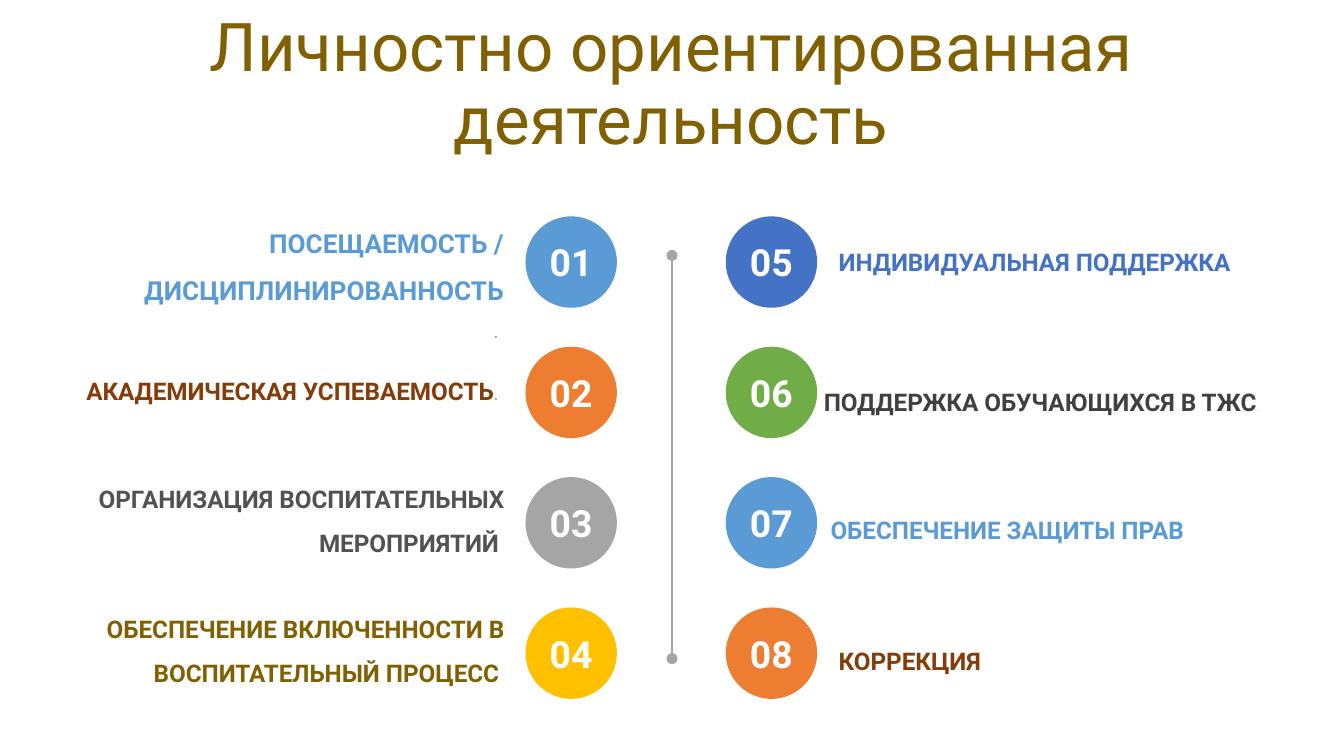
from copy import deepcopy
from dataclasses import dataclass

from lxml import etree
from pptx import Presentation
from pptx.dml.color import RGBColor
from pptx.enum.shapes import MSO_CONNECTOR, MSO_SHAPE
from pptx.enum.text import MSO_ANCHOR, MSO_AUTO_SIZE, PP_ALIGN
from pptx.oxml.ns import qn
from pptx.util import Inches, Pt

LEFT, CENTER, RIGHT = PP_ALIGN.LEFT, PP_ALIGN.CENTER, PP_ALIGN.RIGHT
MIDDLE = MSO_ANCHOR.MIDDLE
NO_FIT, GROW = MSO_AUTO_SIZE.NONE, MSO_AUTO_SIZE.SHAPE_TO_FIT_TEXT
OVAL, STRAIGHT = MSO_SHAPE.OVAL, MSO_CONNECTOR.STRAIGHT

FONT = "Roboto"
COLORS = {
    "white": "FFFFFF", "blue": "5B9BD5", "orange": "ED7D31", "gray": "A5A5A5",
    "gold": "FFC000", "navy": "4472C4", "green": "70AD47", "brown": "843C0B",
    "olive": "806000", "slate": "525252", "dark": "404040", "pale": "EDECEC",
}
CIRCLE, FIRST_TOP, ROW_STEP = 0.68, 1.61, 0.97
CIRCLE_LEFTS = (3.91, 5.4)
ROWS = 4


@dataclass
class Item:
    label: str
    fill: str
    color: str
    left: float
    top: float
    height: float = 0.33
    width: float = 3.54
    size: int = 13
    tail: str = ""
    tail_color: str = "gray"
    tail_break: bool = False


ITEMS = [
    Item("ПОСЕЩАЕМОСТЬ / ДИСЦИПЛИНИРОВАННОСТЬ", "blue", "blue", 0.21, 1.57,
         height=0.98, size=14, tail=". ", tail_break=True),
    Item("АКАДЕМИЧЕСКАЯ УСПЕВАЕМОСТЬ", "orange", "brown", 0.21, 2.69, tail=". "),
    Item("ОРГАНИЗАЦИЯ ВОСПИТАТЕЛЬНЫХ МЕРОПРИЯТИЙ", "gray", "slate", 0.21, 3.49,
         height=0.66, tail=" ", tail_color="slate"),
    Item("ОБЕСПЕЧЕНИЕ ВКЛЮЧЕННОСТИ В ВОСПИТАТЕЛЬНЫЙ ПРОЦЕСС", "gold", "olive",
         0.21, 4.46, height=0.66, tail=" ", tail_color="olive"),
    Item("ИНДИВИДУАЛЬНАЯ ПОДДЕРЖКА", "navy", "navy", 6.24, 1.73),
    Item("ПОДДЕРЖКА ОБУЧАЮЩИХСЯ В ТЖС", "green", "dark", 6.13, 2.77,
         tail=".", tail_color="pale"),
    Item("ОБЕСПЕЧЕНИЕ ЗАЩИТЫ ПРАВ", "blue", "blue", 6.18, 3.72),
    Item("КОРРЕКЦИЯ", "orange", "brown", 6.24, 4.7, width=3.77),
]


def rgb(name: str) -> RGBColor:
    return RGBColor.from_string(COLORS[name])


def set_frame(tf, auto_size) -> None:
    frame = {"margin_left": 0, "margin_top": 0, "margin_right": 0,
             "margin_bottom": 0, "word_wrap": True,
             "vertical_anchor": MIDDLE, "auto_size": auto_size}
    for name, value in frame.items():
        setattr(tf, name, value)


def add_run(p, text: str, size: int, color: str, bold: bool):
    r = p.add_run()
    r.text = text
    for name, value in {"name": FONT, "size": Pt(size), "bold": bold}.items():
        setattr(r.font, name, value)
    r.font.color.rgb = rgb(color)
    return r


def add_title(s, text: str) -> None:
    sp = s.shapes.title
    place = {"left": 0.42, "top": 0.37, "width": 9.15, "height": 0.54}
    for name, value in place.items():
        setattr(sp, name, Inches(value))
    set_frame(sp.text_frame, NO_FIT)
    p = sp.text_frame.paragraphs[0]
    p.alignment, p.line_spacing = CENTER, 0.9
    add_run(p, text, 36, "olive", False)


def add_label(s, item: Item, align) -> None:
    sp = s.shapes.add_textbox(Inches(item.left), Inches(item.top),
                              Inches(item.width), Inches(item.height))
    set_frame(sp.text_frame, GROW)
    p = sp.text_frame.paragraphs[0]
    p.alignment, p.line_spacing = align, 1.5
    r = add_run(p, item.label, item.size, item.color, True)
    if item.tail_break:
        p.add_line_break()
        p._p[-1].append(deepcopy(r._r.rPr))
    if item.tail:
        add_run(p, item.tail, 11, item.tail_color, False)


def add_circle(s, number: int, left: float, top: float, fill: str) -> None:
    sp = s.shapes.add_shape(OVAL, Inches(left), Inches(top),
                            Inches(CIRCLE), Inches(CIRCLE))
    sp.shadow.inherit = False
    sp.fill.solid()
    sp.fill.fore_color.rgb = rgb(fill)
    sp.line.fill.background()
    set_frame(sp.text_frame, NO_FIT)
    p = sp.text_frame.paragraphs[0]
    p.alignment = CENTER
    add_run(p, f"{number:02d}", 20, "white", True)


def add_divider(s) -> None:
    line = s.shapes.add_connector(STRAIGHT, Inches(5), Inches(1.9),
                                  Inches(5), Inches(4.9))
    line.line.color.rgb = rgb("gray")
    line.line.width = Pt(1)
    ln = line.line._get_or_add_ln()
    for end in ("a:headEnd", "a:tailEnd"):
        etree.SubElement(ln, qn(end), type="oval")
    etree.SubElement(line._element.spPr, qn("a:effectLst"))


def main() -> None:
    prs = Presentation()
    prs.slide_width = Inches(10)
    prs.slide_height = prs.slide_width * 9 // 16
    s = prs.slides.add_slide(prs.slide_layouts[5])
    add_title(s, "Личностно ориентированная деятельность")
    for i, item in enumerate(ITEMS):
        column, row = divmod(i, ROWS)
        add_label(s, item, (RIGHT, LEFT)[column])
        add_circle(s, i + 1, CIRCLE_LEFTS[column],
                   FIRST_TOP + row * ROW_STEP, item.fill)
    add_divider(s)
    prs.save("out.pptx")


if __name__ == "__main__":
    main()
